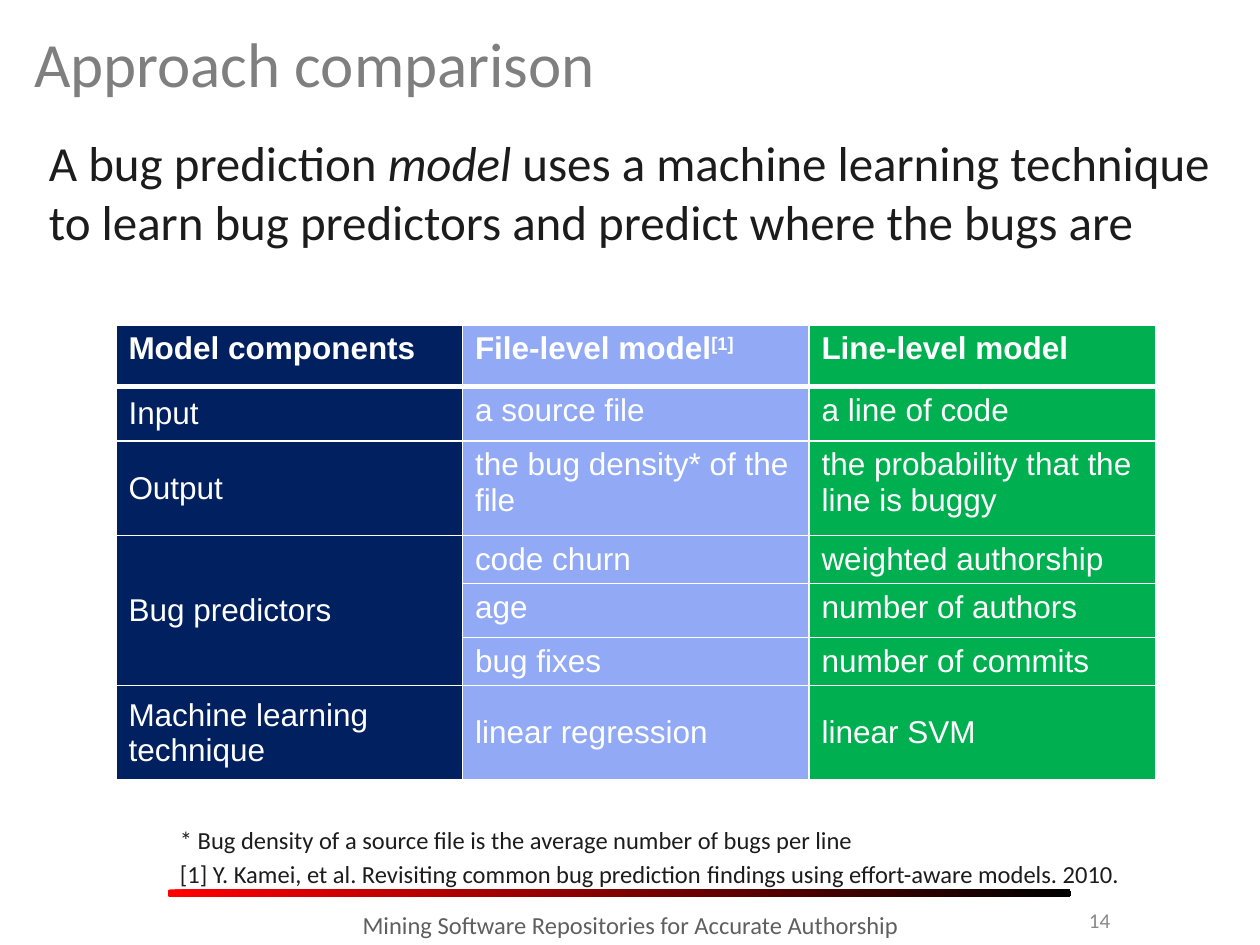
from dataclasses import dataclass

from lxml import etree
from pptx import Presentation
from pptx import util as u
from pptx.dml.color import RGBColor
from pptx.enum import shapes, text
from pptx.oxml import ns

NAVY, PERIWINKLE, GREEN = "002060", "92AAF6", "00B050"
WHITE, INK = "FFFFFF", "1C1C1C"
TOP, MIDDLE = text.MSO_ANCHOR.TOP, text.MSO_ANCHOR.MIDDLE
LEFT, CENTER, RIGHT = text.PP_ALIGN.LEFT, text.PP_ALIGN.CENTER, text.PP_ALIGN.RIGHT


@dataclass(frozen=True)
class Run:
    content: str
    italic: bool = False
    superscript: bool = False


@dataclass(frozen=True)
class TableRow:
    height: float
    component: str
    file_level: str | list[Run]
    line_level: str
    anchor: text.MSO_ANCHOR = TOP


@dataclass(frozen=True)
class Caption:
    box: tuple[float, float, float, float]
    paragraphs: list
    size: int
    color: str
    align: text.PP_ALIGN = LEFT
    anchor: text.MSO_ANCHOR = TOP
    space_before: float = 0


ROWS = [
    TableRow(0.49, "Model components",
             [Run("File-level model"), Run("[1]", superscript=True)], "Line-level model"),
    TableRow(0.43, "Input", "a source file", "a line of code"),
    TableRow(0.75, "Output", "the bug density* of the file",
             "the probability that the line is buggy"),
    TableRow(0.38, "Bug predictors", "code churn", "weighted authorship"),
    TableRow(0.43, "", "age", "number of authors"),
    TableRow(0.38, "", "bug fixes", "number of commits"),
    TableRow(0.75, "Machine learning technique", "linear regression", "linear SVM", MIDDLE),
]

CAPTIONS = [
    Caption((7.58, 7.1, 1.33, 0.4), ["14"], 12, "898989", RIGHT, MIDDLE),
    Caption((2.42, 7.17, 5.17, 0.4),
            ["Mining Software Repositories for Accurate Authorship"], 14, "5F5F5F", CENTER),
    Caption((1.33, 6.5, 7.91, 0.46),
            ["* Bug density of a source file is the average number of bugs per line",
             "[1] Y. Kamei, et al. Revisiting common bug prediction ﬁndings "
             "using effort-aware models. 2010."], 14, INK, space_before=2.8),
    Caption((0.29, 1, 9.58, 1.42),
            [[Run("A bug prediction "), Run("model ", italic=True),
              Run("uses a machine learning technique to learn bug predictors "
                  "and predict where the bugs are")]], 28, INK),
]


def rgb(value: str) -> RGBColor:
    return RGBColor.from_string(value)


def place(shape, box: tuple[float, float, float, float]) -> None:
    shape.left, shape.top, shape.width, shape.height = map(u.Inches, box)


def write_text(frame, paragraphs: list, *, size: int, color: str, font: str = "Calibri",
               bold: bool = False, align=LEFT, anchor=TOP, space_before: float = 0) -> None:
    frame.word_wrap = True
    frame.vertical_anchor = anchor
    for index, content in enumerate(paragraphs):
        paragraph = frame.add_paragraph() if index else frame.paragraphs[0]
        paragraph.alignment = align
        paragraph.space_before = u.Pt(space_before if index else 0)
        for part in [Run(content)] if isinstance(content, str) else content:
            run = paragraph.add_run()
            run.text = part.content
            run.font.name, run.font.size = font, u.Pt(size)
            run.font.bold, run.font.italic = bold, part.italic
            run.font.color.rgb = rgb(color)
            if part.superscript:
                run.font._element.set("baseline", "30000")


def add_title(slide) -> None:
    title = slide.shapes.title
    place(title, (0.17, 0.08, 9.67, 0.83))
    write_text(title.text_frame, ["Approach comparison"], size=36, color="7F7F7F",
               anchor=MIDDLE)
    title.text_frame.auto_size = text.MSO_AUTO_SIZE.NONE


def add_footer_bar(slide) -> None:
    bar = slide.shapes.add_shape(shapes.MSO_SHAPE.ROUNDED_RECTANGLE,
                                 *map(u.Inches, (1.33, 7.06, 7.17, 0.06)))
    bar.adjustments[0] = 0.33
    bar.shadow.inherit = False
    bar.line.fill.background()
    bar.fill.gradient()
    bar.fill.gradient_angle = 0
    for stop, position, color in zip(bar.fill.gradient_stops, (0, 1), ("FF0000", "000000")):
        stop.position = position
        stop.color.rgb = rgb(color)


def add_caption(slide, caption: Caption) -> None:
    box = slide.shapes.add_textbox(*map(u.Inches, caption.box))
    write_text(box.text_frame, caption.paragraphs, size=caption.size, color=caption.color,
               align=caption.align, anchor=caption.anchor, space_before=caption.space_before)


def set_borders(cell, widths: dict[str, int]) -> None:
    properties = cell._tc.get_or_add_tcPr()
    for side, width in widths.items():
        line = etree.SubElement(properties, ns.qn(f"a:ln{side}"), w=str(u.Pt(width)))
        fill = etree.SubElement(line, ns.qn("a:solidFill"))
        etree.SubElement(fill, ns.qn("a:srgbClr"), val=WHITE)


def add_comparison_table(slide) -> None:
    table = slide.shapes.add_table(len(ROWS), 3, *map(u.Inches, (0.92, 2.58, 8.25, 3.61))).table
    for column in table.columns:
        column.width = u.Inches(2.75)
    for row_index, row in enumerate(ROWS):
        table.rows[row_index].height = u.Inches(row.height)
        header = row_index == 0
        contents = (row.component, row.file_level, row.line_level)
        for column_index, (content, color) in enumerate(zip(contents, (NAVY, PERIWINKLE, GREEN))):
            cell = table.cell(row_index, column_index)
            set_borders(cell, {"L": 1, "R": 1, "T": 3 if row_index == 1 else 1,
                               "B": 3 if header else 1})
            cell.fill.solid()
            cell.fill.fore_color.rgb = rgb(color)
            cell.vertical_anchor = MIDDLE if column_index == 0 and not header else row.anchor
            if content:
                write_text(cell.text_frame, [content], size=18, color=WHITE, font="Arial",
                           bold=header, anchor=None)
    table.cell(3, 0).merge(table.cell(5, 0))


def main() -> None:
    presentation = Presentation()
    presentation.slide_width, presentation.slide_height = u.Inches(10), u.Inches(7.5)
    slide = presentation.slides.add_slide(presentation.slide_layouts[5])
    add_footer_bar(slide)
    add_title(slide)
    add_comparison_table(slide)
    for caption in CAPTIONS:
        add_caption(slide, caption)
    presentation.save("out.pptx")


if __name__ == "__main__":
    main()
